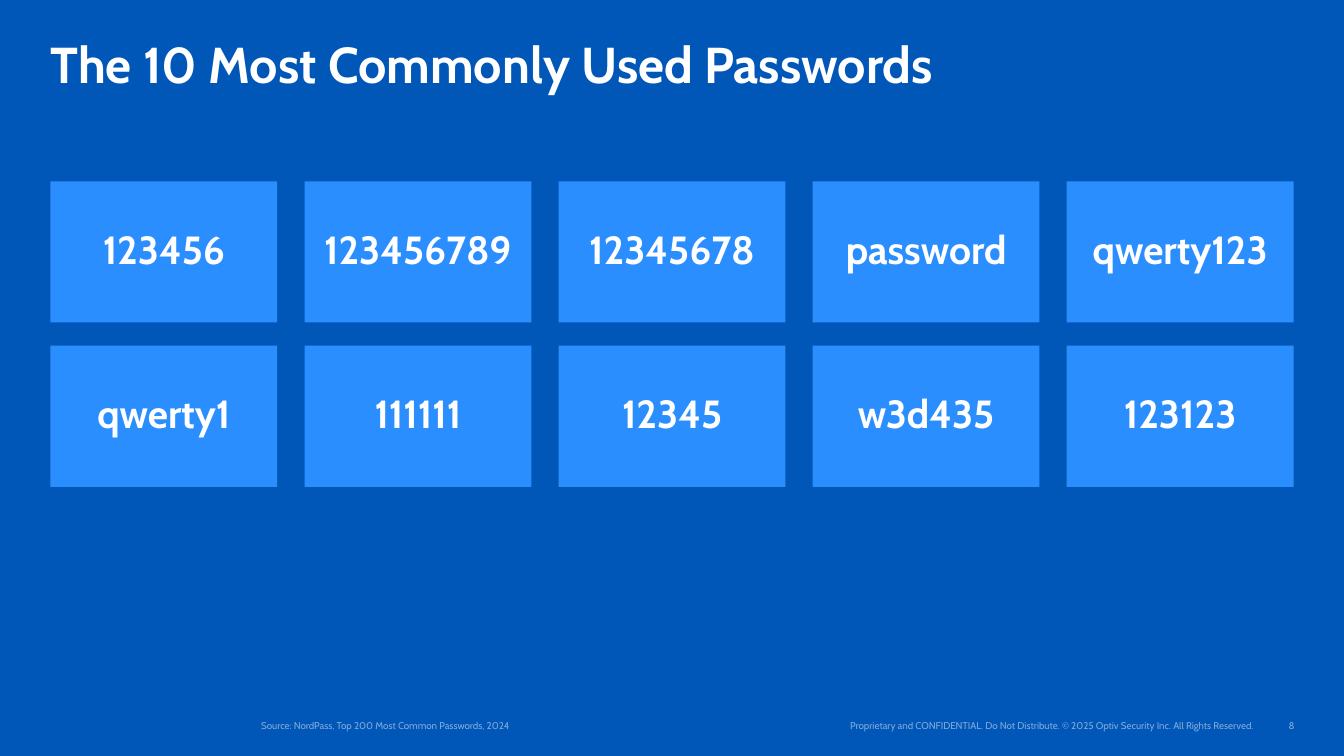
"""Build the slide of the ten most commonly used passwords."""
from pptx import Presentation
from pptx.dml import color
from pptx.enum import shapes, text
from pptx.oxml import xmlchemy as xml
from pptx.util import Inches, Pt

BLUE = color.RGBColor(0x00, 0x57, 0xB8)
SKY = color.RGBColor(0x2B, 0x8E, 0xFF)
WHITE = color.RGBColor(0xFF, 0xFF, 0xFF)

HEAD = {"name": "Cabin", "size": Pt(36), "bold": True}
CARD = {"name": "Cabin", "size": Pt(28), "bold": True}
NOTE = {"name": "Cabin", "size": Pt(7), "bold": False}

WORDS = [
    ["123456", "123456789", "12345678", "password", "qwerty123"],
    ["qwerty1", "111111", "12345", "w3d435", "123123"],
]
SOURCE = "Source: NordPass, Top 200 Most Common Passwords, 2024"
RIGHTS = ("Proprietary and CONFIDENTIAL. Do Not Distribute. "
          "© 2025 Optiv Security Inc. All Rights Reserved.")


def apply(item, values):
    """Set each attribute of item from a dict."""
    for key, value in values.items():
        setattr(item, key, value)


def place(shape, left, top, width, height):
    """Put a shape at a place given in inches."""
    apply(shape, {"left": Inches(left), "top": Inches(top),
                  "width": Inches(width), "height": Inches(height)})


def write(shape, words, look, align, anchor, inset=0, line=1.0):
    """Fill a shape with one formatted paragraph."""
    frame = shape.text_frame
    pad = Inches(inset)
    apply(frame, {"margin_left": pad, "margin_right": pad,
                  "margin_top": pad, "margin_bottom": pad,
                  "word_wrap": True, "vertical_anchor": anchor,
                  "auto_size": text.MSO_AUTO_SIZE.NONE})
    para = frame.paragraphs[0]
    apply(para, {"alignment": align, "line_spacing": line,
                 "space_before": Pt(0)})
    run = para.add_run()
    run.text = words
    apply(run.font, look)
    run.font.color.rgb = WHITE
    return run


def add_title(slide, words):
    """Write the slide title."""
    title = slide.shapes.title
    place(title, 0.5, 0.4, 12.33, 0.56)
    write(title, words, HEAD, text.PP_ALIGN.LEFT, text.MSO_ANCHOR.TOP, line=0.9)


def add_card(slide, words, left, top):
    """Add one password card."""
    card = slide.shapes.add_shape(shapes.MSO_SHAPE.RECTANGLE, Inches(left),
                                  Inches(top), Inches(2.25), Inches(1.4))
    card.shadow.inherit = False
    card.fill.solid()
    card.fill.fore_color.rgb = SKY
    card.line.fill.background()
    write(card, words, CARD, text.PP_ALIGN.CENTER, text.MSO_ANCHOR.MIDDLE,
          inset=0.12, line=0.9)


def add_note(shape, words, left, width, align):
    """Write a half transparent footer line in a shape."""
    place(shape, left, 7.06, width, 0.2)
    run = write(shape, words, NOTE, align, text.MSO_ANCHOR.BOTTOM)
    tint = run.font.fill.fore_color
    tint.rgb = WHITE
    fill = run.font._element.solidFill.srgbClr
    alpha = xml.OxmlElement("a:alpha")
    alpha.set("val", "50000")
    fill.append(alpha)


def drop_bullet(shape):
    """Remove the bullet and indent of the first paragraph."""
    props = shape.text_frame.paragraphs[0]._p.get_or_add_pPr()
    props.set("marL", "0")
    props.set("indent", "0")
    props.append(xml.OxmlElement("a:buNone"))


def add_box(slide):
    """Add an empty text box."""
    return slide.shapes.add_textbox(0, 0, Inches(1), Inches(1))


def main():
    """Build and save the slide."""
    deck = Presentation()
    apply(deck, {"slide_width": Inches(13.33), "slide_height": Inches(7.5)})
    slide = deck.slides.add_slide(deck.slide_layouts[1])
    slide.background.fill.solid()
    slide.background.fill.fore_color.rgb = BLUE

    add_title(slide, "The 10 Most Commonly Used Passwords")
    for row, line in enumerate(WORDS):
        for col, word in enumerate(line):
            add_card(slide, word, 0.5 + 2.52 * col, 1.8 + 1.63 * row)

    body = slide.placeholders[1]
    drop_bullet(body)
    add_note(body, SOURCE, 2.59, 5.02, text.PP_ALIGN.LEFT)
    add_note(add_box(slide), RIGHTS, 7.81, 4.62, text.PP_ALIGN.RIGHT)
    add_note(add_box(slide), "8", 12.43, 0.41, text.PP_ALIGN.RIGHT)
    deck.save("out.pptx")


if __name__ == "__main__":
    main()
